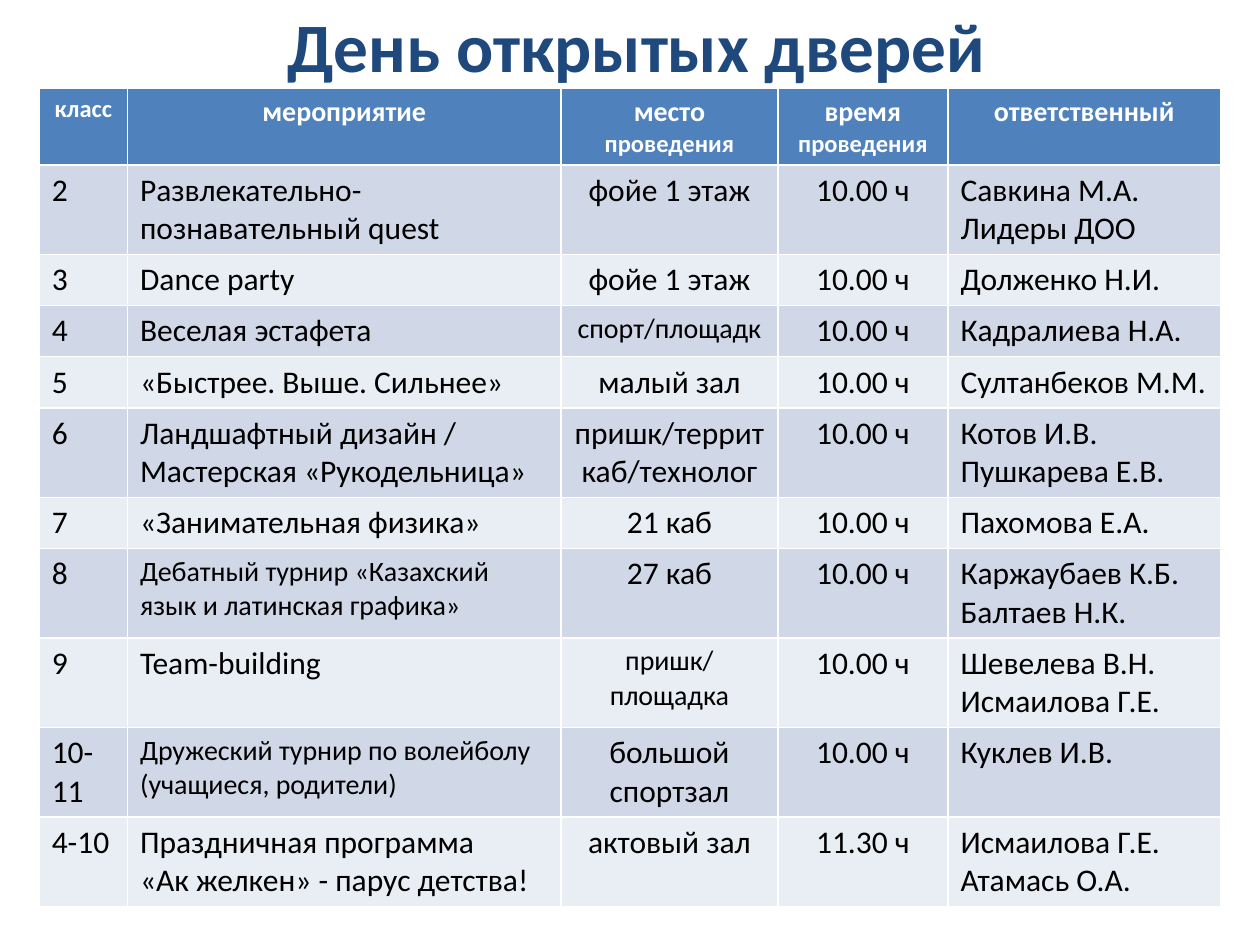
from collections import namedtuple
from dataclasses import dataclass

from pptx import Presentation
from pptx.dml.color import RGBColor as Rgb
from pptx.enum.text import MSO_ANCHOR as Anchor, MSO_AUTO_SIZE as AutoSize, PP_ALIGN as Align
from pptx.util import Cm, Pt

Box = namedtuple("Box", "left top width height")
Sized = namedtuple("Sized", "text size")


@dataclass(frozen=True)
class Theme:
    font: str = "Calibri"
    title: Rgb = Rgb(0x1F, 0x49, 0x7D)
    header_fill: Rgb = Rgb(0x4F, 0x81, 0xBD)
    header_text: Rgb = Rgb(0xFF, 0xFF, 0xFF)
    body_text: Rgb = Rgb(0, 0, 0)
    bands: tuple = (Rgb(0xD0, 0xD8, 0xE8), Rgb(0xE9, 0xED, 0xF4))
    title_size: float = 39.6
    body_size: int = 18
    medium_size: int = 16
    small_size: int = 14


THEME = Theme()
TITLE_BOX = Box(Cm(1.4), Cm(0.4), Cm(22.86), Cm(1.02))
TABLE_BOX = Box(Cm(0.79), Cm(1.78), Cm(23.81), Cm(16.28))
COLUMN_WIDTHS = (1.78, 8.74, 4.37, 3.43, 5.49)
CENTERED_COLUMNS = (2, 3)
ROW_HEIGHT = Cm(1.03)


def small(text):
    return Sized(text, THEME.small_size)


def medium(text):
    return Sized(text, THEME.medium_size)


# A header cell is a list of runs
HEADER = (
    [small("класс")],
    [medium("мероприятие")],
    [medium("место "), small("проведения")],
    [medium("время "), small("проведения")],
    [medium("ответственный")],
)

# A line break in a body cell starts a new paragraph
EVENTS = (
    ("2", "Развлекательно-познавательный quest", "фойе 1 этаж", "10.00 ч",
     "Савкина М.А.\nЛидеры ДОО"),
    ("3", "Dance party", "фойе 1 этаж", "10.00 ч", "Долженко Н.И."),
    ("4", "Веселая эстафета", medium("спорт/площадк"), "10.00 ч", "Кадралиева Н.А."),
    ("5", "«Быстрее. Выше. Сильнее»", "малый зал", "10.00 ч", "Султанбеков М.М."),
    ("6", "Ландшафтный дизайн /\nМастерская «Рукодельница»",
     "пришк/террит\nкаб/технолог", "10.00 ч", "Котов И.В.\nПушкарева Е.В."),
    ("7", "«Занимательная физика»", "21 каб", "10.00 ч", "Пахомова Е.А."),
    ("8", medium("Дебатный турнир «Казахский язык и латинская графика»"), "27 каб",
     "10.00 ч", "Каржаубаев К.Б.\nБалтаев Н.К."),
    ("9", "Team-building", medium("пришк/\nплощадка"), "10.00 ч",
     "Шевелева В.Н.\nИсмаилова Г.Е."),
    ("10-11", medium("Дружеский турнир по волейболу (учащиеся, родители)"),
     "большой спортзал", "10.00 ч", "Куклев И.В."),
    ("4-10", "Праздничная программа\n«Ак желкен» - парус детства!", "актовый зал",
     "11.30 ч", "Исмаилова Г.Е.\nАтамась О.А."),
)


def set_attributes(target, values):
    for name, value in values.items():
        setattr(target, name, value)


def add_run(paragraph, text, size, color, bold=False):
    run = paragraph.add_run()
    run.text = text
    set_attributes(run.font, {"name": THEME.font, "size": Pt(size), "bold": bold})
    run.font.color.rgb = color


def fill_cell(cell, color):
    cell.fill.solid()
    cell.fill.fore_color.rgb = color


def place_title(slide, box):
    title = slide.shapes.title
    set_attributes(title, box._asdict())
    frame = title.text_frame
    set_attributes(frame, {"auto_size": AutoSize.NONE, "word_wrap": True,
                           "vertical_anchor": Anchor.MIDDLE})
    paragraph = frame.paragraphs[0]
    paragraph.alignment = Align.CENTER
    add_run(paragraph, "День открытых дверей", THEME.title_size, THEME.title, bold=True)


def write_header(table):
    for column, runs in enumerate(HEADER):
        cell = table.cell(0, column)
        fill_cell(cell, THEME.header_fill)
        paragraph = cell.text_frame.paragraphs[0]
        paragraph.alignment = Align.CENTER
        for text, size in runs:
            add_run(paragraph, text, size, THEME.header_text, bold=True)


def write_body_cell(cell, content, alignment):
    text, size = content if isinstance(content, Sized) else (content, THEME.body_size)
    frame = cell.text_frame
    for index, line in enumerate(text.split("\n")):
        paragraph = frame.add_paragraph() if index else frame.paragraphs[0]
        paragraph.alignment = alignment
        add_run(paragraph, line, size, THEME.body_text)


def place_schedule(slide, box):
    frame = slide.shapes.add_table(len(EVENTS) + 1, len(HEADER), *box)
    table = frame.table
    for column, width in zip(table.columns, COLUMN_WIDTHS):
        column.width = Cm(width)
    # Rows grow from this height to fit their text
    for row in table.rows:
        row.height = ROW_HEIGHT
    frame.height = box.height

    write_header(table)
    for index, event in enumerate(EVENTS):
        for column, content in enumerate(event):
            cell = table.cell(index + 1, column)
            fill_cell(cell, THEME.bands[index % 2])
            alignment = Align.CENTER if column in CENTERED_COLUMNS else Align.LEFT
            write_body_cell(cell, content, alignment)


def main():
    presentation = Presentation()
    set_attributes(presentation, {"slide_width": Cm(25.4), "slide_height": Cm(19.05)})
    title_only = presentation.slide_layouts[5]
    slide = presentation.slides.add_slide(title_only)
    place_title(slide, TITLE_BOX)
    place_schedule(slide, TABLE_BOX)
    presentation.save("out.pptx")


if __name__ == "__main__":
    main()
